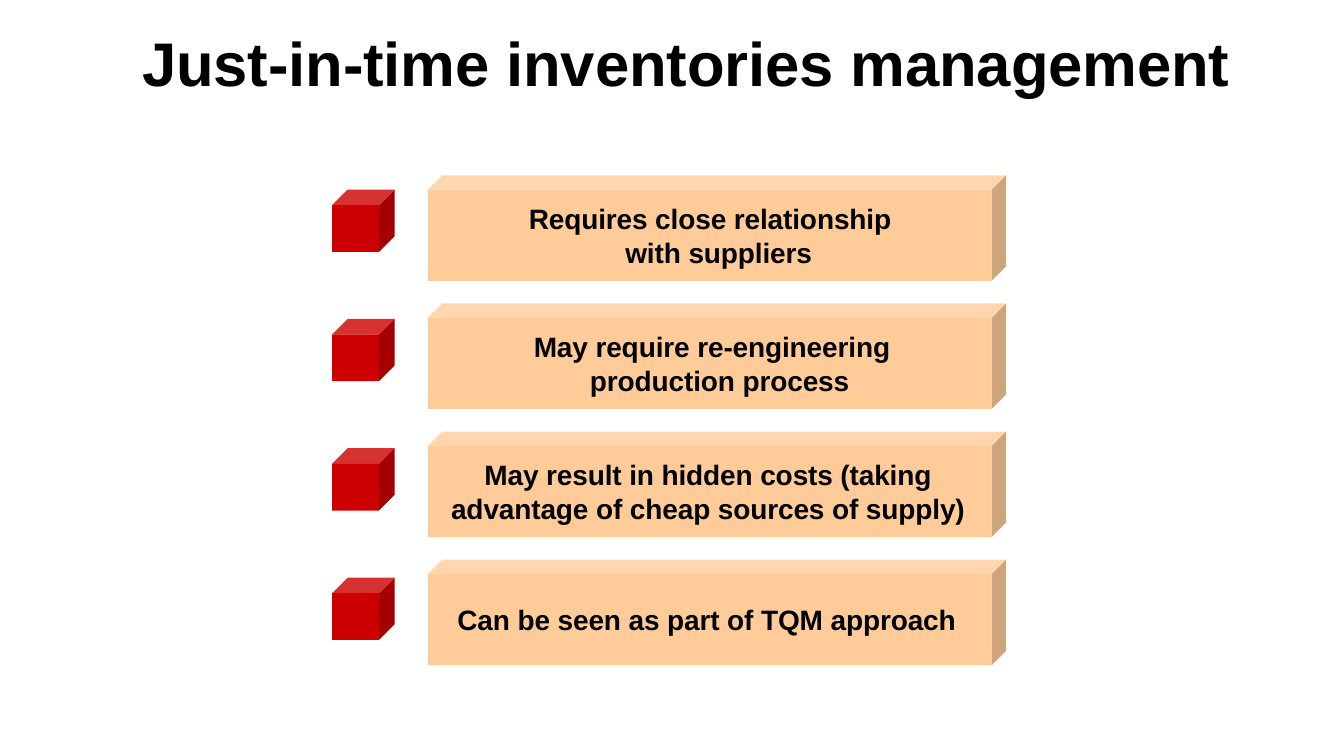
from dataclasses import dataclass

from pptx import Presentation
from pptx.dml.color import RGBColor as RGB
from pptx.enum.shapes import MSO_SHAPE as Preset
from pptx.enum.text import MSO_ANCHOR as Anchor, MSO_AUTO_SIZE as AutoSize, PP_ALIGN as Align
from pptx.util import Pt

HEADING = "Just-in-time inventories management"
# Each statement is a list of (line, start of the line from the block's left edge)
STATEMENTS = [
    [("Requires close relationship", 72), ("with suppliers", 141)],
    [("May require re-engineering", 75.6), ("production process", 115.7)],
    [("May result in hidden costs (taking", 40.3),
     ("advantage of cheap sources of supply)", 16.5)],
    [("Can be seen as part of TQM approach", 21)],
]


@dataclass(frozen=True)
class Theme:
    font: str = "Arial"
    text: str = "000000"
    heading_size: float = 44
    statement_size: float = 20
    statement_leading: float = 24
    tracking: str = "-10"
    block: tuple = ("FFCC99", "FFD6AD", "CDA47B")  # front, top, side
    marker: tuple = ("CC0000", "D63232", "A40000")


@dataclass(frozen=True)
class Solid:
    left: float
    top: float
    pitch: float
    width: float
    height: float
    depth: float
    colours: tuple


THEME = Theme()
BLOCK = Solid(305.7, 125.3, 91.5, 402.6, 65.2, 10.2, THEME.block)
MARKER = Solid(237.3, 135.4, 92.4, 33.4, 33.4, 11.1, THEME.marker)


def paint(face, colour):
    face.fill.solid()
    face.fill.fore_color.rgb = RGB.from_string(colour)
    face.line.fill.background()
    face.shadow.inherit = False


def add_face(group, corners, colour):
    start, *others = [(Pt(x), Pt(y)) for x, y in corners]
    builder = group.shapes.build_freeform(*start)
    builder.add_line_segments(others, close=True)
    paint(builder.convert_to_shape(), colour)


def add_solid(slide, solid, row):
    """Draw the solid for one row and return its front face."""
    group = slide.shapes.add_group_shape()
    front_colour, top_colour, side_colour = solid.colours
    left, right = solid.left, solid.left + solid.width
    back_top = solid.top + row * solid.pitch
    top = back_top + solid.depth
    bottom = top + solid.height
    back_right = right + solid.depth
    add_face(group, [(back_right, back_top), (right, top), (right, bottom),
                     (back_right, bottom - solid.depth)], side_colour)
    add_face(group, [(back_right, back_top), (left + solid.depth, back_top),
                     (left, top), (right, top)], top_colour)
    front = group.shapes.add_shape(Preset.RECTANGLE, Pt(left), Pt(top),
                                   Pt(solid.width), Pt(solid.height))
    paint(front, front_colour)
    return front


def style(paragraph, size):
    font = paragraph.font
    font.name, font.size, font.bold = THEME.font, Pt(size), True
    font.color.rgb = RGB.from_string(THEME.text)
    paragraph.alignment = Align.LEFT
    for run in paragraph.runs:
        run._r.get_or_add_rPr().set("spc", THEME.tracking)


def clear_insets(frame):
    frame.margin_left = frame.margin_top = frame.margin_right = frame.margin_bottom = 0


def write_statement(front, lines):
    """Write the lines as one paragraph, with a hanging indent for the second."""
    frame = front.text_frame
    clear_insets(frame)
    frame.word_wrap = True
    frame.vertical_anchor = Anchor.MIDDLE
    paragraph = frame.paragraphs[0]
    paragraph.text = "\v".join(line for line, _ in lines)
    style(paragraph, THEME.statement_size)
    paragraph.line_spacing = Pt(THEME.statement_leading)
    first, last = lines[0][1], lines[-1][1]
    indents = paragraph._p.get_or_add_pPr()
    indents.set("marL", str(Pt(last)))
    indents.set("indent", str(Pt(first - last)))


def write_heading(heading):
    heading.left, heading.top = Pt(101.5), Pt(16.6)
    heading.width, heading.height = Pt(782), Pt(54.7)
    frame = heading.text_frame
    frame.text = HEADING
    clear_insets(frame)
    frame.margin_top = Pt(1)
    frame.word_wrap = False
    frame.auto_size = AutoSize.NONE
    frame.vertical_anchor = Anchor.TOP
    paragraph = frame.paragraphs[0]
    style(paragraph, THEME.heading_size)
    paragraph.space_before = Pt(1)


def main():
    deck = Presentation()
    deck.slide_width, deck.slide_height = Pt(960), Pt(540)
    slide = deck.slides.add_slide(deck.slide_layouts[5])
    write_heading(slide.shapes.title)
    for row, lines in enumerate(STATEMENTS):
        add_solid(slide, MARKER, row)
        write_statement(add_solid(slide, BLOCK, row), lines)
    deck.save("out.pptx")


if __name__ == "__main__":
    main()
